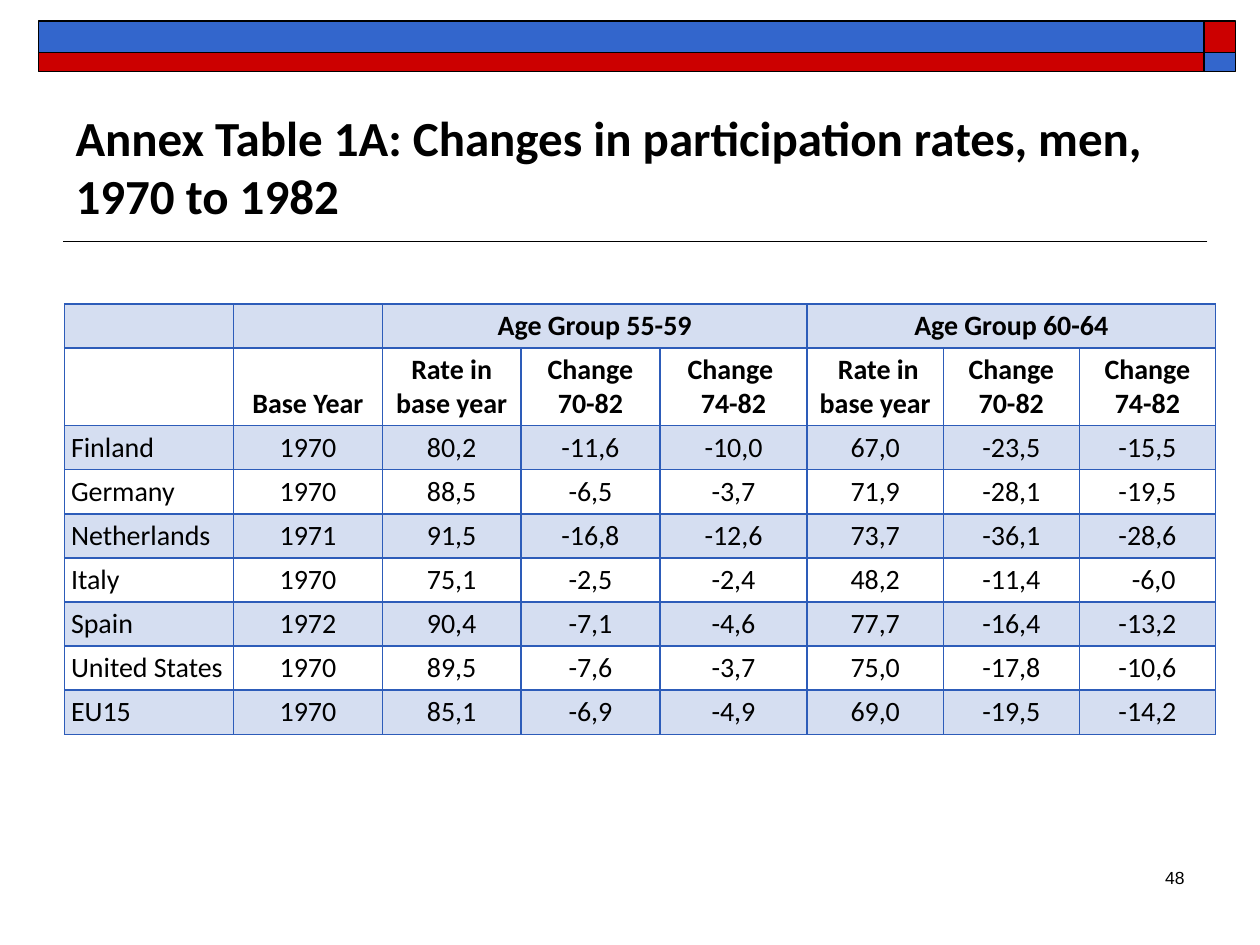
from lxml.etree import SubElement
from pptx import Presentation
from pptx.dml.color import RGBColor
from pptx.enum.shapes import MSO_CONNECTOR, MSO_SHAPE
from pptx.enum.text import MSO_ANCHOR, MSO_AUTO_SIZE, PP_ALIGN
from pptx.oxml import parse_xml
from pptx.oxml.ns import nsdecls, qn
from pptx.util import Pt

BLACK, BLUE, RED, TABLE_BLUE = "000000", "3366CC", "CC0000", "2D5CB9"
TITLE_FONT = {"name": "Calibri", "size": Pt(28), "bold": True}
HEAD_FONT = {"name": "Calibri", "size": Pt(16), "bold": True}
BODY_FONT = {"name": "Calibri", "size": Pt(16), "bold": False}
NUMBER_FONT = {"name": "Arial", "size": Pt(10)}
CELL_FORMAT = {
    "vertical_anchor": MSO_ANCHOR.BOTTOM,
    "margin_left": Pt(3.6), "margin_right": Pt(3.6),
    "margin_top": Pt(2.88), "margin_bottom": Pt(2.88),
}

COLUMN_WIDTHS = [96.5, 85, 79.3, 79.3, 84.2, 77.8, 77.8, 77.8]
ROW_HEIGHT, HEADING_HEIGHT = 25.2, 44.4
GROUPS = {2: "Age Group 55-59", 5: "Age Group 60-64"}
HEADINGS = ["", "Base Year", "Rate in base year", "Change 70-82", "Change  74-82",
            " Rate in base year", "Change 70-82", "Change 74-82"]
RATES = [
    ["Finland", "1970", "80,2", "-11,6", "-10,0", "67,0", "-23,5", "-15,5"],
    ["Germany", "1970", "88,5", "-6,5", "-3,7", "71,9", "-28,1", "-19,5"],
    ["Netherlands", "1971", "91,5", "-16,8", "-12,6", "73,7", "-36,1", "-28,6"],
    ["Italy", "1970", "75,1", "-2,5", "-2,4", "48,2", "-11,4", "-6,0"],
    ["Spain", "1972", "90,4", "-7,1", "-4,6", "77,7", "-16,4", "-13,2"],
    ["United States", "1970", "89,5", "-7,6", "-3,7", "75,0", "-17,8", "-10,6"],
    ["EU15", "1970", "85,1", "-6,9", "-4,9", "69,0", "-19,5", "-14,2"],
]


def color(value):
    return RGBColor.from_string(value)


def apply(target, values):
    for name, value in values.items():
        setattr(target, name, value)


def write(para, text, font, align=PP_ALIGN.LEFT):
    para.alignment = align
    if text:
        span = para.add_run()
        span.text = text
        apply(span.font, font)
        span.font.color.rgb = color(BLACK)
    else:
        # An empty cell keeps the text size, so its row stays low
        SubElement(para._p, qn("a:endParaRPr"), sz=str(int(font["size"].pt * 100)))


def add_banner(page, left, top, width, height):
    """Two stacked bars whose colours swap in the corner at the right."""
    corner, upper = 18, 18
    columns = [(left, width - corner), (left + width - corner, corner)]
    rows = [(top, upper), (top + upper, height - upper)]
    for i, (x, w) in enumerate(columns):
        for j, (y, h) in enumerate(rows):
            bar = page.shapes.add_shape(MSO_SHAPE.RECTANGLE, Pt(x), Pt(y), Pt(w), Pt(h))
            bar.shadow.inherit = False
            bar.fill.solid()
            bar.fill.fore_color.rgb = color(BLUE if i == j else RED)
            bar.line.color.rgb = color(BLACK)
            bar.line.width = Pt(1)


def add_rule(page, left, top, width):
    rule = page.shapes.add_connector(
        MSO_CONNECTOR.STRAIGHT, Pt(left + width), Pt(top), Pt(left), Pt(top))
    rule.line.color.rgb = color(BLACK)
    rule.line.width = Pt(1)
    SubElement(rule._element.spPr, qn("a:effectLst"))


def place_title(page, text, left, top, width, height):
    title = page.shapes.title
    apply(title, {"left": Pt(left), "top": Pt(top), "width": Pt(width), "height": Pt(height)})
    apply(title.text_frame, {"word_wrap": True, "auto_size": MSO_AUTO_SIZE.NONE,
                             "vertical_anchor": MSO_ANCHOR.BOTTOM})
    write(title.text_frame.paragraphs[0], text, TITLE_FONT)


def style_cell(cell, shaded):
    apply(cell, CELL_FORMAT)
    if shaded:
        cell.fill.solid()
        cell.fill.fore_color.rgb = color(TABLE_BLUE)
    else:
        cell.fill.background()
    properties = cell._tc.get_or_add_tcPr()
    for tint in properties.iter(qn("a:srgbClr")):
        SubElement(tint, qn("a:alpha"), val="20000")
    # Borders come before the fill
    for index, side in enumerate(("lnL", "lnR", "lnT", "lnB")):
        properties.insert(index, parse_xml(
            f'<a:{side} {nsdecls("a")} w="12700"><a:solidFill>'
            f'<a:srgbClr val="{TABLE_BLUE}"/></a:solidFill></a:{side}>'))


def add_rates_table(page, left, top):
    group_row = [GROUPS.get(column, "") for column in range(len(HEADINGS))]
    rows = [group_row, HEADINGS] + RATES
    heights = [ROW_HEIGHT, HEADING_HEIGHT] + [ROW_HEIGHT] * len(RATES)
    table = page.shapes.add_table(
        len(rows), len(HEADINGS), Pt(left), Pt(top),
        Pt(sum(COLUMN_WIDTHS)), Pt(sum(heights))).table
    apply(table, {"first_row": False, "horz_banding": False})
    for column, width in zip(table.columns, COLUMN_WIDTHS):
        column.width = Pt(width)
    for row, height in zip(table.rows, heights):
        row.height = Pt(height)

    for i, texts in enumerate(rows):
        for j, text in enumerate(texts):
            cell = table.cell(i, j)
            style_cell(cell, shaded=i % 2 == 0)
            align = PP_ALIGN.CENTER if i < 2 or j else PP_ALIGN.LEFT
            write(cell.text_frame.paragraphs[0], text,
                  HEAD_FONT if i < 2 else BODY_FONT, align)
            if text == "-6,0":  # set slightly to the right
                cell.margin_left = Pt(10.8)
    for first in GROUPS:
        table.cell(0, first).merge(table.cell(0, first + 2))


def add_page_number(page, text, left, top, width, height):
    box = page.shapes.add_textbox(Pt(left), Pt(top), Pt(width), Pt(height))
    box.text_frame.word_wrap = True
    write(box.text_frame.paragraphs[0], text, NUMBER_FONT, PP_ALIGN.RIGHT)


def main():
    deck = Presentation()
    apply(deck, {"slide_width": Pt(720), "slide_height": Pt(540)})
    page = deck.slides.add_slide(deck.slide_layouts[5])
    add_rule(page, 36, 138, 654)
    add_banner(page, 22, 12, 684, 29)
    add_page_number(page, "48", 534, 492, 150, 36)
    place_title(page, "Annex Table 1A: Changes in participation rates, men, 1970 to 1982",
                36, 42, 648, 90)
    add_rates_table(page, 37, 173.6)
    deck.save("out.pptx")


if __name__ == "__main__":
    main()
